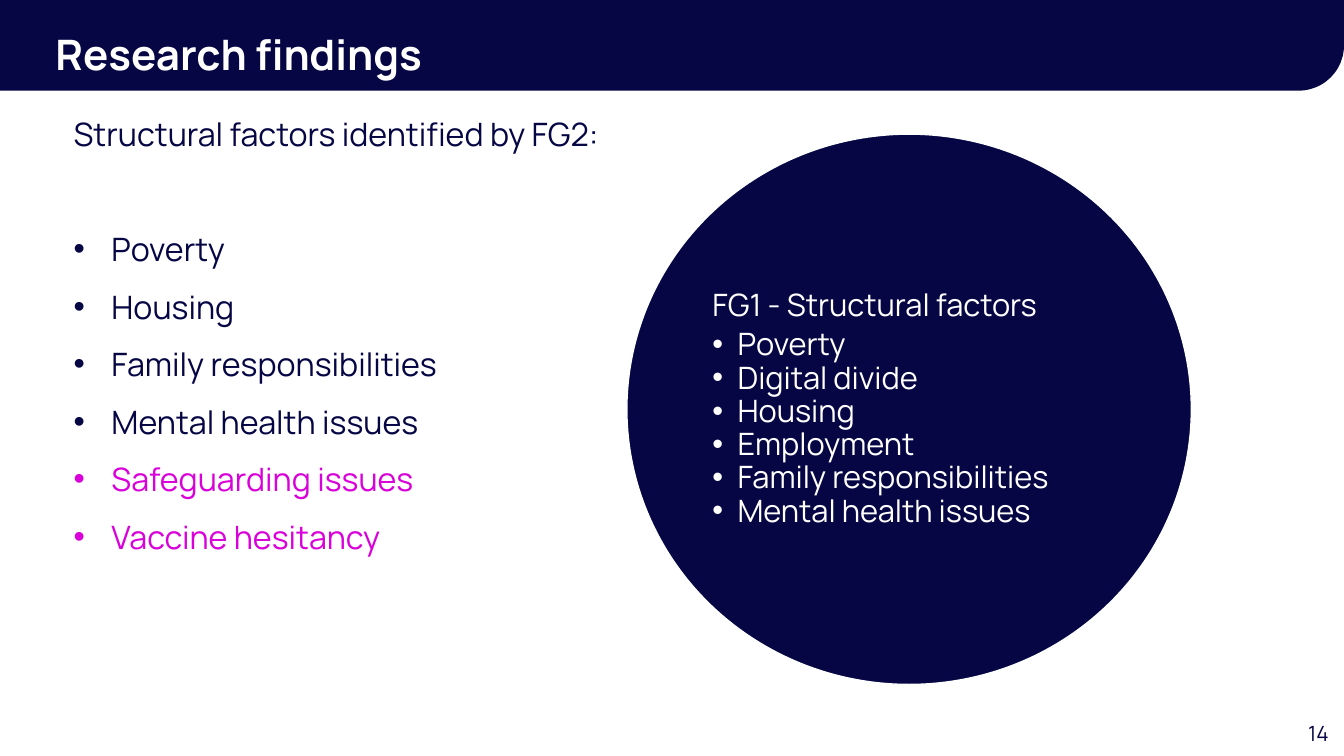
import pptx
import pptx.util
import pptx.dml.color
import pptx.enum.shapes
import pptx.enum.text
import pptx.oxml.ns
from lxml import etree

Pt = pptx.util.Pt
Color = pptx.dml.color.RGBColor
Align = pptx.enum.text.PP_ALIGN
Anchor = pptx.enum.text.MSO_ANCHOR
Shape = pptx.enum.shapes.MSO_SHAPE

NAVY = Color(0x06, 0x06, 0x45)
WHITE = Color(0xFF, 0xFF, 0xFF)
EDGE = Color(0xFE, 0xFF, 0xFF)
PINK = Color(0xD9, 0x00, 0xD9)
FONT = "Manrope"

TITLE = "Research findings"
PAGE = "14"
LEFT_HEAD = "Structural factors identified by FG2:"
SHARED = ["Poverty", "Housing", "Family responsibilities", "Mental health issues"]
ADDED = ["Safeguarding issues", "Vaccine hesitancy"]
RING_HEAD = "FG1 - Structural factors"
RING_LIST = ["Poverty", "Digital divide", "Housing", "Employment",
             "Family responsibilities", "Mental health issues"]


def place(shape, left, top, width, height):
    shape.left, shape.top = Pt(left), Pt(top)
    shape.width, shape.height = Pt(width), Pt(height)


def frame(shape, anchor=Anchor.TOP, inset=None):
    text = shape.text_frame
    text.word_wrap = True
    text.auto_size = pptx.enum.text.MSO_AUTO_SIZE.NONE
    text.vertical_anchor = anchor
    if inset is not None:
        text.margin_left = text.margin_right = Pt(inset)
        text.margin_top = text.margin_bottom = Pt(inset)
    return text


def write(text, words, size, color, space=1, before=0, after=0,
          indent=0, bold=False, align=Align.LEFT):
    first = text.paragraphs[0]
    para = text.add_paragraph() if first.runs else first
    para.alignment = align
    para.line_spacing = space
    para.space_before, para.space_after = Pt(before), Pt(after)
    props = para._p.get_or_add_pPr()
    props.set("marL", str(int(Pt(indent))))
    props.set("indent", str(-int(Pt(indent))))
    tag = pptx.oxml.ns.qn
    if indent:
        etree.SubElement(props, tag("a:buFont")).set("typeface", "Arial")
        etree.SubElement(props, tag("a:buChar")).set("char", "•")
    else:
        etree.SubElement(props, tag("a:buNone"))
    run = para.add_run()
    run.text = words
    run.font.name, run.font.size = FONT, Pt(size)
    run.font.bold = bold
    run.font.color.rgb = color


def solid(slide, kind, *box):
    shape = slide.shapes.add_shape(kind, *map(Pt, box))
    shape.shadow.inherit = False
    shape.fill.solid()
    shape.fill.fore_color.rgb = NAVY
    shape.line.fill.background()
    return shape


def main():
    deck = pptx.Presentation()
    deck.slide_width, deck.slide_height = Pt(960), Pt(540)
    slide = deck.slides.add_slide(deck.slide_layouts[1])
    title, body = slide.placeholders

    bar = solid(slide, Shape.ROUND_1_RECTANGLE, 0, 0, 960, 64.8)
    bar.adjustments[0] = 0.5
    bar.element.spPr.get_or_add_xfrm().set("flipV", "1")
    title.element.addprevious(bar.element)

    place(title, 32.4, 13, 847.4, 38.9)
    write(frame(title), TITLE, 30, WHITE, 1.1, bold=True)

    place(body, 45.4, 72.7, 434.9, 329.8)
    text = frame(body)
    write(text, LEFT_HEAD, 23, NAVY, 1.2)
    for spot, item in enumerate(SHARED + ADDED):
        color = PINK if item in ADDED else NAVY
        write(text, item, 23, color, 1.2, before=8 if spot else 49, indent=27)

    ring = solid(slide, Shape.OVAL, 447.8, 95.8, 403.2, 393.1)
    ring.line.color.rgb = EDGE
    ring.line.width = Pt(1)
    label = slide.shapes.add_textbox(Pt(506.9), Pt(153.4), Pt(285.1), Pt(277.9))
    text = frame(label, Anchor.MIDDLE, 2)
    write(text, RING_HEAD, 22, WHITE, 0.9, after=4.4)
    for item in RING_LIST:
        write(text, item, 22, WHITE, 0.9, indent=18)

    page = slide.shapes.add_textbox(Pt(906.5), Pt(511.2), Pt(49.7), Pt(25.2))
    write(frame(page), PAGE, 15, NAVY, align=Align.RIGHT)
    deck.save("out.pptx")


if __name__ == "__main__":
    main()
